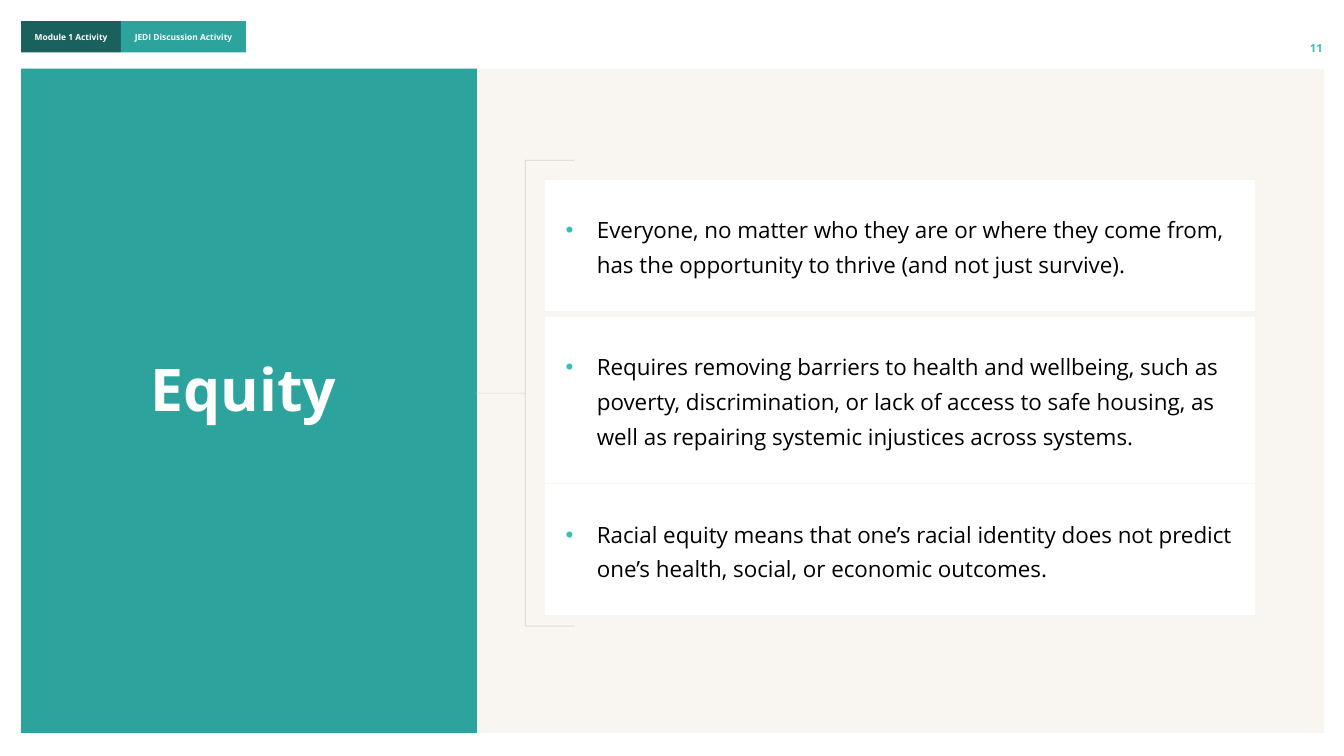
"""Builds the Equity slide of the JEDI discussion activity."""
from lxml import etree
from pptx import Presentation
from pptx.dml.color import RGBColor
from pptx.enum import shapes, text
from pptx.oxml import ns
from pptx.util import Inches, Pt

TEAL = RGBColor(0x2D, 0xA3, 0x9D)
DARK_TEAL = RGBColor(0x1A, 0x60, 0x5D)
BRIGHT_TEAL = RGBColor(0x35, 0xBF, 0xB9)
CREAM = RGBColor(0xF9, 0xF5, 0xF1)
SAND = RGBColor(0xDA, 0xD2, 0xC9)
WHITE = RGBColor(0xFF, 0xFF, 0xFF)
BLACK = RGBColor(0, 0, 0)
SHAPE = shapes.MSO_SHAPE
ALIGN = text.PP_ALIGN
ANCHOR = text.MSO_ANCHOR


def write(frame, words, size, color, bold=True, **layout):
    para = frame.paragraphs[0]
    for name, value in layout.items():
        setattr(para, name, value)
    span = para.add_run()
    span.text = words
    for name, value in dict(name="Open Sans", size=Pt(size), bold=bold).items():
        setattr(span.font, name, value)
    span.font.color.rgb = color
    return para


def add_panel(kind, left, top, width, height, fill):
    panel = page.shapes.add_shape(
        kind, Inches(left), Inches(top), Inches(width), Inches(height))
    panel.shadow.inherit = False
    panel.fill.solid()
    panel.fill.fore_color.rgb = fill
    panel.line.fill.background()
    return panel


deck = Presentation()
deck.slide_width, deck.slide_height = Inches(13.33), Inches(7.5)
page = deck.slides.add_slide(deck.slide_layouts[5])

backdrop = add_panel(SHAPE.SNIP_1_RECTANGLE, 0.21, 0.68, 12.92, 6.59, CREAM)
backdrop.adjustments[0] = 0

tabs = [("Module 1 Activity", 0.21, 0.99, DARK_TEAL),
        ("JEDI Discussion Activity", 1.2, 1.24, TEAL)]
for label, left, width, fill in tabs:
    tab = add_panel(SHAPE.RECTANGLE, left, 0.21, width, 0.31, fill)
    tab.text_frame.margin_left = tab.text_frame.margin_right = 0
    tab.text_frame.vertical_anchor = ANCHOR.MIDDLE
    write(tab.text_frame, label, 6, WHITE, alignment=ALIGN.CENTER)

add_panel(SHAPE.RECTANGLE, 0.21, 0.68, 4.52, 6.59, TEAL)

number = page.shapes.add_textbox(Inches(12.25), Inches(0.21), Inches(0.87), Inches(0.33))
number_format = dict(word_wrap=True, vertical_anchor=ANCHOR.BOTTOM, margin_left=Inches(0.1),
                     margin_top=0, margin_right=0, margin_bottom=0)
for name, value in number_format.items():
    setattr(number.text_frame, name, value)
write(number.text_frame, "11", 8, BRIGHT_TEAL, alignment=ALIGN.RIGHT)

title = page.shapes.title
title_place = dict(left=0.84, top=3.53, width=3.3, height=0.84)
for name, value in title_place.items():
    setattr(title, name, Inches(value))
title.text_frame.vertical_anchor = ANCHOR.TOP
title.text_frame.auto_size = text.MSO_AUTO_SIZE.NONE
write(title.text_frame, "Equity ", 42, WHITE, alignment=ALIGN.CENTER, line_spacing=0.9)
page.shapes._spTree.append(title._element)

points = [
    (1.79, 1.19, "Everyone, no matter who they are or where they come from, "
                 "has the opportunity to thrive (and not just survive). "),
    (3.15, 1.49, "Requires removing barriers to health and wellbeing, such as "
                 "poverty, discrimination, or lack of access to safe housing, "
                 "as well as repairing systemic injustices across systems."),
    (4.81, 1.19, "Racial equity means that one’s racial identity does not predict "
                 "one’s health, social, or economic outcomes. "),
]
cell_format = dict(vertical_anchor=ANCHOR.MIDDLE,
                   margin_left=Inches(0.2), margin_right=Inches(0.2),
                   margin_top=Inches(0.3), margin_bottom=Inches(0.3))
for top, height, words in points:
    table = page.shapes.add_table(
        1, 1, Inches(5.41), Inches(top), Inches(7.03), Inches(height)).table
    table.first_row = table.horz_banding = False
    cell = table.cell(0, 0)
    for name, value in cell_format.items():
        setattr(cell, name, value)
    cell.fill.solid()
    cell.fill.fore_color.rgb = WHITE
    para = write(cell.text_frame, words, 16, BLACK, bold=False,
                 line_spacing=1.14, space_after=Pt(6))
    props = para._p.get_or_add_pPr()
    props.set("marL", str(Inches(0.31)))
    props.set("indent", str(-Inches(0.31)))
    bullet_color = etree.SubElement(props, ns.qn("a:buClr"))
    etree.SubElement(bullet_color, ns.qn("a:srgbClr"), val=str(BRIGHT_TEAL))
    etree.SubElement(props, ns.qn("a:buFont"), typeface="Arial")
    etree.SubElement(props, ns.qn("a:buChar"), char="•")

brace = add_panel(SHAPE.LEFT_BRACE, 4.72, 1.59, 0.98, 4.62, CREAM)
brace.fill.background()
brace.adjustments[0], brace.adjustments[1] = 0, 0.5
brace.line.color.rgb = SAND
brace.line.width = Pt(0.5)

deck.save("out.pptx")
